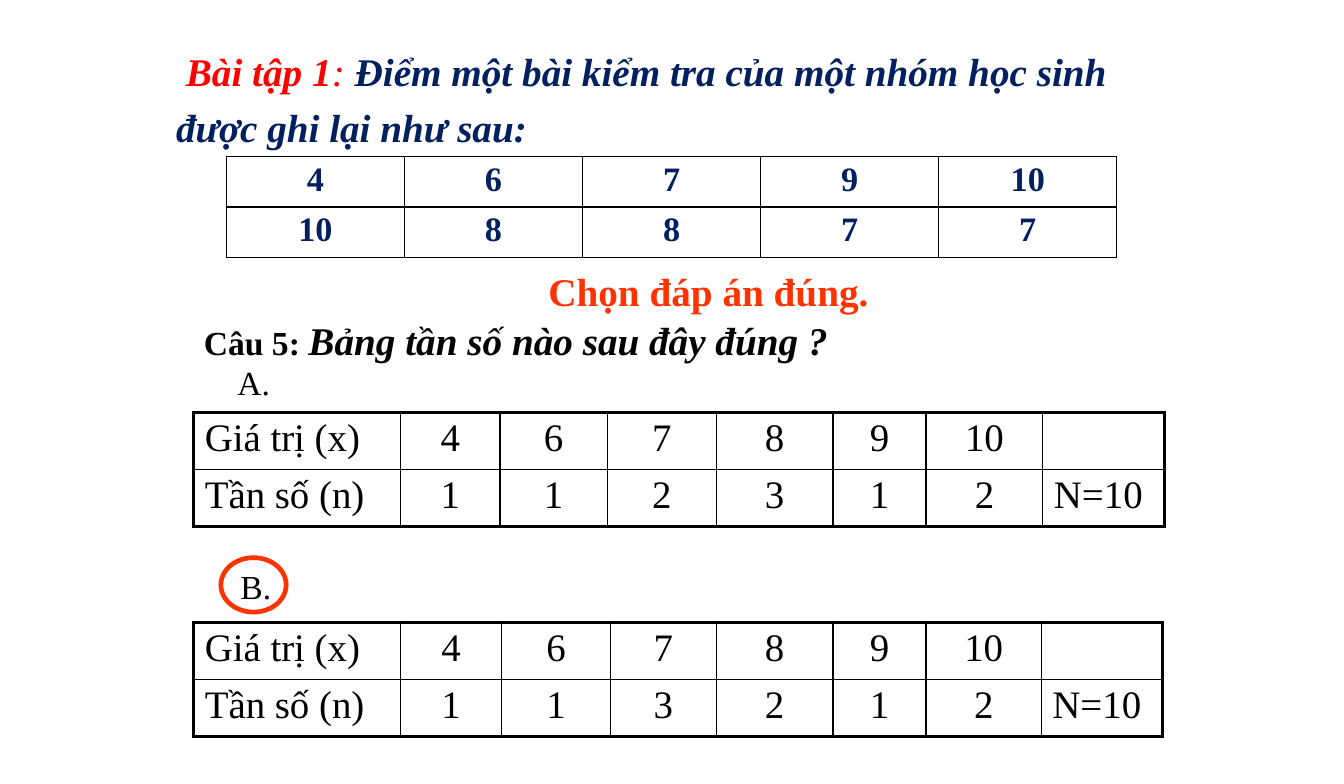
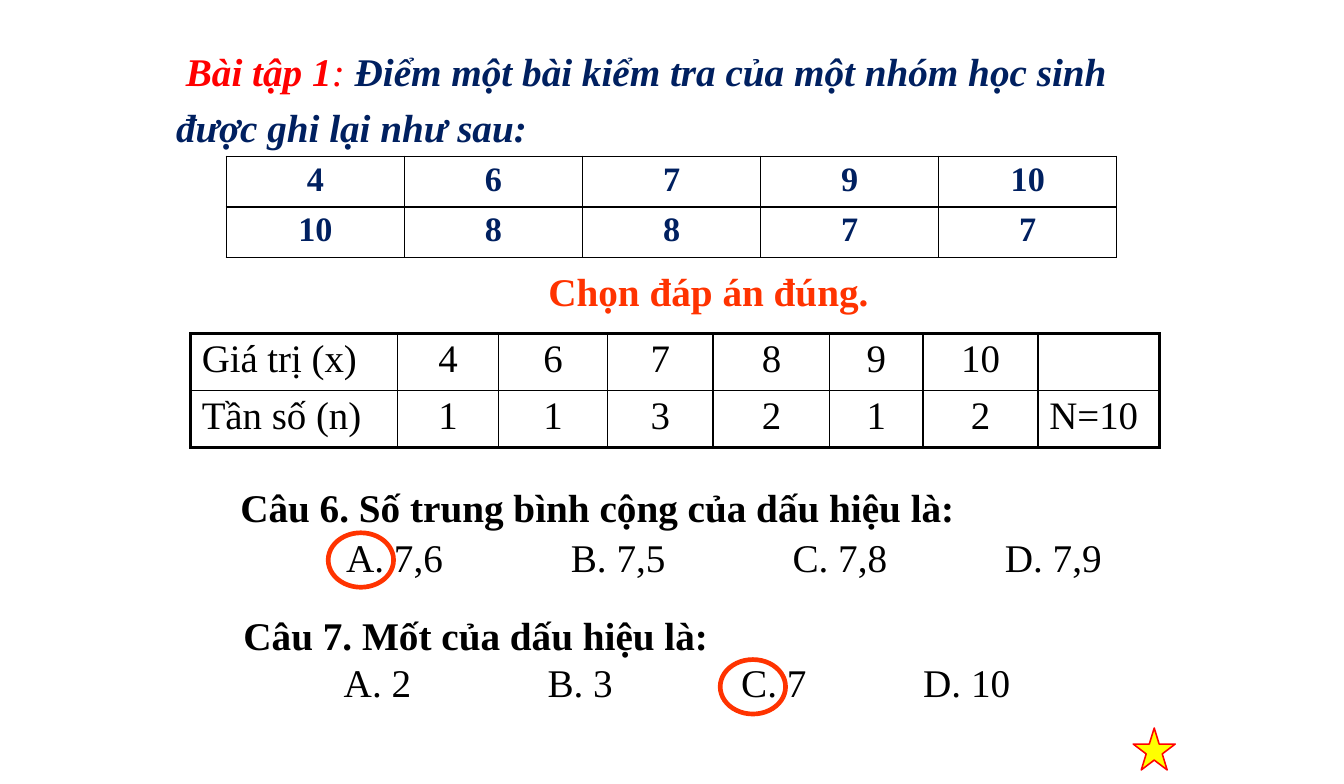
from pptx import Presentation
from pptx.dml.color import RGBColor
from pptx.enum.shapes import MSO_SHAPE as Shape
from pptx.enum.text import MSO_ANCHOR as Anchor, MSO_AUTO_SIZE as AutoSize, PP_ALIGN as Align
from pptx.oxml.ns import qn
from pptx.util import Pt
from lxml.etree import SubElement

BLACK = RGBColor(0, 0, 0)
RED = RGBColor(0xFF, 0, 0)
NAVY = RGBColor(0, 0x20, 0x60)
ORANGE = RGBColor(0xFF, 0x33, 0)
YELLOW = RGBColor(0xFF, 0xFF, 0)
FONT = "Times New Roman"
LARGE, SMALL = 25.2, 21.6
THIN, THICK = 1, 2.25

SCORES = [["4", "6", "7", "9", "10"], ["10", "8", "8", "7", "7"]]
SCORE_WIDTHS = [114.5] * 5
WRONG_COUNTS = ["1", "1", "2", "3", "1", "2"]
WRONG_WIDTHS = [133, 64, 69, 70, 75, 60, 75, 78]
RIGHT_COUNTS = ["1", "1", "3", "2", "1", "2"]
RIGHT_WIDTHS = [133, 65, 70, 68, 75, 60, 74, 78]


def place(*lengths):
    """Turn point numbers into lengths."""
    return [Pt(length) for length in lengths]


def style(font, size=None, color=None, bold=None, italic=None):
    """Set the given properties of a font in the shared typeface."""
    font.name = FONT
    if size:
        font.size = Pt(size)
    if color is not None:
        font.color.rgb = color
    if bold is not None:
        font.bold = bold
    if italic is not None:
        font.italic = italic


def add_span(para, text, **look):
    """Append a run with its own look."""
    span = para.add_run()
    span.text = text
    style(span.font, **look)


def add_title(page):
    """Fill the title placeholder with the exercise statement."""
    title = page.shapes.title
    title.left, title.top, title.width, title.height = place(106, 30, 650, 59)
    frame = title.text_frame
    frame.vertical_anchor = Anchor.TOP
    frame.auto_size = AutoSize.NONE
    first, second = frame.paragraphs[0], frame.add_paragraph()
    for para in (first, second):
        para.alignment = Align.LEFT
        para.line_spacing = 0.9
        para.space_before = Pt(9)
        style(para.font, LARGE, NAVY, italic=True)
    add_span(first, " Bài tập 1", color=RED, bold=True)
    add_span(first, ": ", color=RED, bold=False)
    add_span(first, "Điểm một bài kiểm tra của một nhóm học sinh", bold=True)
    add_span(second, "được ghi lại như sau:", bold=True)


def add_text(page, bounds, text="", size=LARGE, color=BLACK, bold=False, indent=7.2):
    """Add a text box and return its first paragraph and its frame."""
    frame = page.shapes.add_textbox(*place(*bounds)).text_frame
    frame.word_wrap = True
    frame.margin_left, frame.margin_right = Pt(indent), 0
    para = frame.paragraphs[0]
    para.text = text
    style(para.font, size, color, bold)
    return para, frame


def add_question(page, bounds, question, options, stops, spacing=1.0, gap=0):
    """Add a bold question over a row of tabbed options."""
    first, frame = add_text(page, bounds, question, bold=True, indent=46.5)
    second = frame.add_paragraph()
    second.text = "".join("\t" + option for option in options)
    style(second.font, LARGE, BLACK)
    for para in (first, second):
        para.line_spacing = spacing
        para.space_before = Pt(gap)
    properties = second._p.get_or_add_pPr()
    tabs = SubElement(properties, qn("a:tabLst"))
    properties.find(qn("a:defRPr")).addprevious(tabs)
    for stop in stops:
        SubElement(tabs, qn("a:tab"), pos=str(Pt(stop)), algn="l")


def set_borders(cell, weights):
    """Draw black left, right, top and bottom cell borders."""
    properties = cell._tc.get_or_add_tcPr()
    for index, (side, weight) in enumerate(zip("LRTB", weights)):
        line = SubElement(properties, qn("a:ln" + side), w=str(Pt(weight)))
        fill = SubElement(line, qn("a:solidFill"))
        SubElement(fill, qn("a:srgbClr"), val=str(BLACK))
        properties.insert(index, line)


def add_grid(page, left, top, rows, widths, row_height, outer, left_columns=(), **look):
    """Add an unfilled table with a frame of its own weight."""
    bounds = place(left, top, sum(widths), row_height * len(rows))
    table = page.shapes.add_table(len(rows), len(widths), *bounds).table
    table.first_row = table.horz_banding = False
    last_row, last_column = len(rows) - 1, len(widths) - 1
    for column, width in zip(table.columns, widths):
        column.width = Pt(width)
    for y, row in enumerate(rows):
        table.rows[y].height = Pt(row_height)
        for x, text in enumerate(row):
            cell = table.cell(y, x)
            cell.fill.background()
            cell.margin_top = cell.margin_bottom = Pt(3)
            para = cell.text_frame.paragraphs[0]
            para.text = text
            para.alignment = Align.LEFT if x in left_columns else Align.CENTER
            style(para.font, **look)
            edges = (x == 0, x == last_column, y == 0, y == last_row)
            set_borders(cell, [outer if edge else THIN for edge in edges])


def add_frequencies(page, left, top, counts, widths):
    """Add a frequency table for the six distinct scores."""
    rows = [["Giá trị (x)", "4", "6", "7", "8", "9", "10", ""],
            ["Tần số (n)", *counts, "N=10"]]
    add_grid(page, left, top, rows, widths, 36.7, THICK, (0, 7), size=25, color=BLACK)


def add_mark(page, kind, bounds, line, weight, fill=None):
    """Add an outlined shape, filled if a colour is given."""
    mark = page.shapes.add_shape(kind, *place(*bounds))
    mark.shadow.inherit = False
    mark.line.color.rgb = line
    mark.line.width = Pt(weight)
    if fill is None:
        mark.fill.background()
    else:
        mark.fill.solid()
        mark.fill.fore_color.rgb = fill


def add_ring(page, left, top):
    """Circle a correct answer."""
    add_mark(page, Shape.OVAL, (left, top, 42, 35), ORANGE, 3)


def add_page(deck):
    """Add a slide with the statement, the scores and the instruction."""
    page = deck.slides.add_slide(deck.slide_layouts[5])
    add_title(page)
    add_grid(page, 145.5, 100.5, SCORES, SCORE_WIDTHS, 32.5, THIN,
             size=22, color=NAVY, bold=True)
    para, _ = add_text(page, (313, 171.5, 254, 32), "Chọn đáp án đúng.",
                       color=ORANGE, bold=True, indent=39.5)
    para.line_spacing = 0.9
    return page


def add_table_choice(deck):
    """Build the slide that asks for the right frequency table."""
    page = add_page(deck)
    add_frequencies(page, 124.5, 265, WRONG_COUNTS, WRONG_WIDTHS)
    add_frequencies(page, 124.5, 400, RIGHT_COUNTS, RIGHT_WIDTHS)
    add_text(page, (145.5, 229, 72, 33), "A.", SMALL)
    add_text(page, (147.5, 360, 72, 33), "B.", SMALL)
    add_ring(page, 142, 358.5)
    para, _ = add_text(page, (124, 199.5, 621, 38), bold=True)
    add_span(para, "Câu 5: ", size=SMALL)
    add_span(para, "Bảng tần số nào sau đây đúng ?", italic=True)


def add_mean_and_mode(deck):
    """Build the slide that asks for the mean and the mode."""
    page = add_page(deck)
    add_question(page, (108, 310.5, 637, 65), "Câu 6. Số trung bình cộng của dấu hiệu là:",
                 ["A. 7,6", "B. 7,5", "C. 7,8", "D. 7,9"], [68, 212.5, 355, 491.5], 0.9, 5)
    add_question(page, (110, 389.5, 668, 68), "Câu 7. Mốt của dấu hiệu là:",
                 ["A. 2", "B. 3", "C. 7", "D. 10"], [64.5, 195.5, 320, 437])
    add_ring(page, 211, 342.5)
    add_ring(page, 463, 424)
    add_frequencies(page, 122.5, 214.5, RIGHT_COUNTS, RIGHT_WIDTHS)
    add_mark(page, Shape.STAR_5_POINT, (728.5, 468, 27, 27), RED, 1, YELLOW)


def main():
    """Build and save the deck."""
    deck = Presentation()
    deck.slide_width, deck.slide_height = place(864, 504)
    add_table_choice(deck)
    add_mean_and_mode(deck)
    deck.save("out.pptx")


if __name__ == "__main__":
    main()
